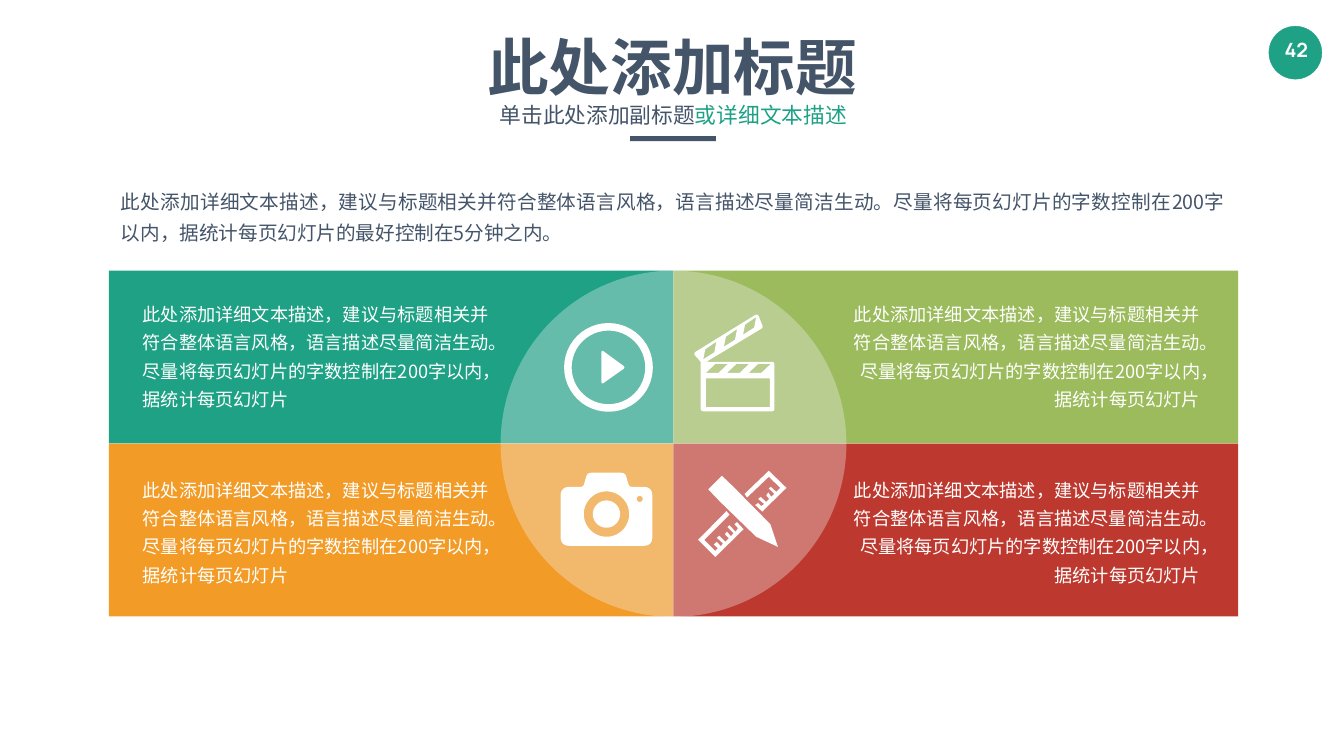
from dataclasses import dataclass
from math import cos, pi, sin
from typing import NamedTuple

from lxml.etree import SubElement
from pptx import Presentation
from pptx.dml.color import RGBColor
from pptx.enum.shapes import MSO_SHAPE
from pptx.enum.text import MSO_ANCHOR, MSO_AUTO_SIZE, PP_ALIGN
from pptx.oxml.ns import qn
from pptx.util import Inches, Pt

SANS = "Noto Sans CJK SC"
SLATE, GREEN, LIME, ORANGE, RED, WHITE = (
    "445469", "1EA185", "9BBB5C", "F29B26", "BD392F", "FFFFFF")
ADVICE = "此处添加详细文本描述，建议与标题相关并符合整体语言风格，语言描述尽量简洁生动。尽量将每页幻灯片的字数控制在200字以内，据统计每页幻灯片"
LEFT, TOP, PANEL_WIDTH, PANEL_HEIGHT = 2.16, 5.37, 11.2, 3.43


class Box(NamedTuple):
    """A rectangle in inches."""
    left: float
    top: float
    width: float
    height: float


class Corner(NamedTuple):
    """An outline corner in inches with its rounding length."""
    x: float
    y: float
    radius: float = 0


class Piece(NamedTuple):
    """A piece of text in one colour."""
    text: str
    colour: str


@dataclass
class TextStyle:
    """How one text box is set."""
    size: float
    font: str = SANS
    bold: bool = False
    align: PP_ALIGN = PP_ALIGN.CENTER
    anchor: MSO_ANCHOR = MSO_ANCHOR.TOP
    spacing: float = 1
    inset_x: float = 0.27
    inset_y: float = 0.13
    wrap: bool = True
    grow: bool = True


@dataclass
class Panel:
    """One coloured quarter with its text alignment."""
    column: int
    row: int
    colour: str
    align: PP_ALIGN


Contour = list[Corner]


def paint(shape, colour: str) -> None:
    """Give a shape a plain fill without line or shadow."""
    shape.shadow.inherit = False
    shape.fill.solid()
    shape.fill.fore_color.rgb = RGBColor.from_string(colour)
    shape.line.fill.background()


def add_preset(slide, kind: MSO_SHAPE, box: Box, colour: str):
    """Draw a filled preset shape."""
    shape = slide.shapes.add_shape(kind, *map(Inches, box))
    paint(shape, colour)
    return shape


def add_text(slide, box: Box, style: TextStyle, pieces: list[Piece]) -> None:
    """Draw a text box holding one paragraph."""
    frame = slide.shapes.add_textbox(*map(Inches, box)).text_frame
    frame.word_wrap = style.wrap
    frame.auto_size = MSO_AUTO_SIZE.SHAPE_TO_FIT_TEXT if style.grow else MSO_AUTO_SIZE.NONE
    frame.vertical_anchor = style.anchor
    frame.margin_left = frame.margin_right = Inches(style.inset_x)
    frame.margin_top = frame.margin_bottom = Inches(style.inset_y)
    paragraph = frame.paragraphs[0]
    paragraph.alignment = style.align
    paragraph.line_spacing = style.spacing
    for piece in pieces:
        run = paragraph.add_run()
        run.text = piece.text
        run.font.size = Pt(style.size)
        run.font.bold = style.bold
        run.font.name = style.font
        run.font.color.rgb = RGBColor.from_string(piece.colour)
        SubElement(run.font._element, qn("a:ea")).set("typeface", style.font)


def circle(x: float, y: float, radius: float) -> Contour:
    """Return a circle as a fine polygon."""
    angles = [2 * pi * step / 72 for step in range(72)]
    return [Corner(x + radius * cos(angle), y + radius * sin(angle)) for angle in angles]


def toward(corner: Corner, other: Corner) -> tuple[float, float]:
    """Return the point one rounding length from a corner along an edge."""
    length = ((other.x - corner.x) ** 2 + (other.y - corner.y) ** 2) ** 0.5
    share = corner.radius / length
    return corner.x + share * (other.x - corner.x), corner.y + share * (other.y - corner.y)


def outline(contour: Contour) -> list[tuple[int, int]]:
    """Return the points of a contour with its corners rounded."""
    points = []
    for index, corner in enumerate(contour):
        start = toward(corner, contour[index - 1])
        end = toward(corner, contour[(index + 1) % len(contour)])
        steps = [step / 8 for step in range(9)] if corner.radius else [0]
        for t in steps:
            points.append(tuple(
                Inches((1 - t) ** 2 * a + 2 * t * (1 - t) * b + t * t * c)
                for a, b, c in zip(start, corner, end)))
    return points


def add_icon(slide, contours: list[Contour]) -> None:
    """Draw a white outline in which inner contours are holes."""
    first, *holes = map(outline, contours)
    builder = slide.shapes.build_freeform(*first[0], scale=1)
    builder.add_line_segments(first[1:], close=True)
    for points in holes:
        builder.move_to(*points[0])
        builder.add_line_segments(points[1:], close=True)
    paint(builder.convert_to_shape(), WHITE)


def corners(*points: tuple) -> Contour:
    """Return a contour from plain tuples."""
    return [Corner(*point) for point in points]


def add_play(slide) -> None:
    """Draw the play button."""
    ring = add_preset(slide, MSO_SHAPE.DONUT, Box(11.19, 6.41, 1.76, 1.76), WHITE)
    ring.adjustments[0] = 0.085
    add_icon(slide, [corners((11.93, 6.94, 0.06), (12.41, 7.29, 0.06), (11.93, 7.63, 0.06))])


def add_clapper(slide) -> None:
    """Draw the clapperboard."""
    board = corners(
        (15.36, 7.18, 0.05), (14.02, 7.18), (14.06, 7.15), (15.14, 6.5, 0.05),
        (15.03, 6.22, 0.07), (13.75, 7.01, 0.06), (13.9, 7.18), (13.9, 8.16, 0.05),
        (15.36, 8.16, 0.05))
    screen = corners((14, 7.51), (15.27, 7.51), (15.27, 8.08), (14, 8.08))
    lower = [corners((x, 7.4), (x + 0.25, 7.4), (x + 0.44, 7.22), (x + 0.19, 7.22))
             for x in (14, 14.42, 14.85)]
    upper = [corners((x, y), (x + 0.22, y - 0.15), (x + 0.18, y + 0.06), (x - 0.04, y + 0.2))
             for x, y in ((13.99, 6.93), (14.4, 6.68), (14.78, 6.44))]
    add_icon(slide, [board, screen, *lower, *upper])


def add_camera(slide) -> None:
    """Draw the camera."""
    body = corners(
        (11.12, 9.66, 0.18), (11.57, 9.66, 0.06), (11.65, 9.38, 0.08), (12.4, 9.38, 0.08),
        (12.48, 9.66, 0.06), (12.94, 9.66, 0.18), (12.94, 10.83, 0.18), (11.12, 10.83, 0.18))
    lens = [circle(12.03, 10.2, radius) for radius in (0.45, 0.27)]
    add_icon(slide, [body, *lens, circle(12.69, 9.9, 0.06)])


def add_tools(slide) -> None:
    """Draw the crossed ruler and pencil."""
    upper_ruler = corners(
        (15.25, 9.46), (15.48, 9.68), (15.4, 9.76), (15.29, 9.66), (15.25, 9.69),
        (15.36, 9.8), (15.3, 9.86), (15.24, 9.77), (15.2, 9.83), (15.26, 9.9),
        (15.2, 9.96), (15.09, 9.86), (15.04, 9.9), (15.16, 10), (15.1, 10.04),
        (15.04, 9.98), (14.98, 10.02), (15.12, 10.15), (15.6, 9.68), (15.25, 9.34),
        (14.77, 9.8), (14.82, 9.87))
    lower_ruler = corners(
        (14.57, 10.4), (14.64, 10.48), (14.59, 10.55), (14.47, 10.42), (14.43, 10.46),
        (14.55, 10.58), (14.5, 10.64), (14.42, 10.55), (14.38, 10.6), (14.46, 10.68),
        (14.39, 10.75), (14.27, 10.63), (14.22, 10.67), (14.34, 10.78), (14.3, 10.84),
        (14.22, 10.75), (14.16, 10.8), (14.24, 10.88), (14.19, 10.93), (13.97, 10.71),
        (14.47, 10.21), (14.41, 10.14), (13.85, 10.71), (14.19, 11.05), (14.75, 10.5),
        (14.62, 10.36))
    pencil = corners((14.56, 9.67), (14.32, 9.44), (14.05, 9.71), (14.28, 9.95),
                     (15, 10.65), (15.43, 10.85), (15.28, 10.4))
    for contour in (upper_ruler, lower_ruler, pencil):
        add_icon(slide, [contour])


def main() -> None:
    """Build and save the slide."""
    presentation = Presentation()
    presentation.slide_width, presentation.slide_height = Inches(26.66), Inches(15)
    slide = presentation.slides.add_slide(presentation.slide_layouts[6])
    badge = add_preset(slide, MSO_SHAPE.OVAL, Box(25.17, 0.52, 1.05, 1.05), GREEN)
    badge.line.color.rgb = RGBColor.from_string(GREEN)
    badge.line.width = Pt(0.5)
    add_text(slide, Box(25.23, 0.66, 0.97, 0.67),
             TextStyle(28, "Manrope", True, inset_x=0.2, inset_y=0.1, wrap=False),
             [Piece("42", WHITE)])
    panels = [Panel(0, 0, GREEN, PP_ALIGN.LEFT), Panel(1, 0, LIME, PP_ALIGN.RIGHT),
              Panel(0, 1, ORANGE, PP_ALIGN.LEFT), Panel(1, 1, RED, PP_ALIGN.RIGHT)]
    for panel in panels:
        add_preset(slide, MSO_SHAPE.RECTANGLE,
                   Box(LEFT + panel.column * PANEL_WIDTH, TOP + panel.row * PANEL_HEIGHT,
                       PANEL_WIDTH, PANEL_HEIGHT), panel.colour)
    disc = add_preset(slide, MSO_SHAPE.OVAL, Box(9.93, TOP, 6.86, 6.87), "F2F2F2")
    colour = disc.fill._xPr.find(qn("a:solidFill"))[0]
    SubElement(colour, qn("a:alpha")).set("val", "34000")
    add_text(slide, Box(2.13, 3.49, 22.43, 1.49),
             TextStyle(28, align=PP_ALIGN.JUSTIFY, anchor=MSO_ANCHOR.MIDDLE, spacing=1.3),
             [Piece(ADVICE + "的最好控制在5分钟之内。", SLATE)])
    for panel in panels:
        add_text(slide, Box(2.56 + panel.column * 14.07, 5.75 + panel.row * 3.49, 7.45, 2.52),
                 TextStyle(26, align=panel.align, anchor=MSO_ANCHOR.MIDDLE, spacing=1.3),
                 [Piece(ADVICE, WHITE)])
    for add_symbol in (add_play, add_tools, add_clapper, add_camera):
        add_symbol(slide)
    add_text(slide, Box(6.57, 0.53, 13.52, 1.58),
             TextStyle(88, bold=True, inset_x=0.1, inset_y=0.05), [Piece("此处添加标题", SLATE)])
    add_preset(slide, MSO_SHAPE.RECTANGLE, Box(12.5, 2.7, 1.7, 0.1), SLATE)
    add_text(slide, Box(6.98, 1.79, 12.75, 0.92),
             TextStyle(31, spacing=1.2, inset_x=0.24, inset_y=0.12, grow=False),
             [Piece("单击此处添加副标题", SLATE), Piece("或详细文本描述", GREEN)])
    presentation.save("out.pptx")


if __name__ == "__main__":
    main()
